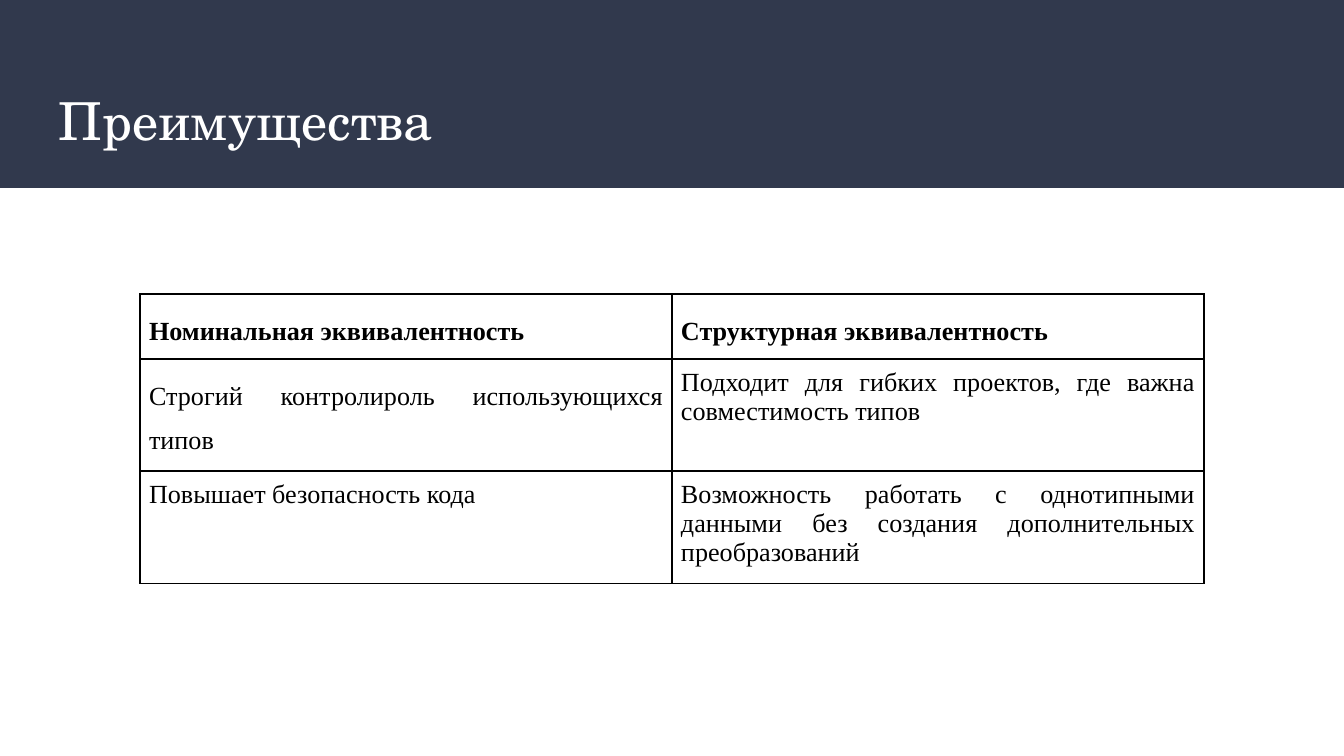
from pptx import Presentation
from pptx.dml.color import RGBColor
from pptx.enum.shapes import MSO_SHAPE as Shape
from pptx.enum.text import MSO_ANCHOR as Anchor, PP_ALIGN as Align
from pptx.oxml import parse_xml
from pptx.oxml.ns import nsdecls
from pptx.util import Pt

PX = 914400 / 134.4
NAVY = RGBColor(0x31, 0x39, 0x4D)
WHITE = RGBColor(0xFF, 0xFF, 0xFF)
BLACK = RGBColor(0x00, 0x00, 0x00)
TITLE_FONT = "TeX Gyre Schola"
TABLE_FONT = "Times New Roman"
ROW_HEIGHTS = (62, 105, 106)
CELL_MARGIN = 9
ROWS = (
    ("Номинальная эквивалентность", "Структурная эквивалентность"),
    ("Строгий контролироль использующихся типов",
     "Подходит для гибких проектов, где важна совместимость типов"),
    ("Повышает безопасность кода",
     "Возможность работать с однотипными данными без создания дополнительных преобразований"),
)
SPACED_CELLS = {(0, 0), (0, 1), (1, 0)}


def px(length):
    """Turn pixels into EMU."""
    return round(length * PX)


def style_font(font, name, size, color, bold=False):
    """Set the look of a font."""
    font.name = name
    font.size = Pt(size)
    font.color.rgb = color
    font.bold = bold


def add_header(page, left, top, width, height):
    """Draw the header band with its title."""
    band = page.shapes.add_shape(
        Shape.RECTANGLE, px(left), px(top), px(width), px(height))
    band.shadow.inherit = False
    band.fill.solid()
    band.fill.fore_color.rgb = NAVY
    band.line.fill.background()

    title = page.shapes.add_textbox(
        px(left + 46), px(top + 74), px(width - 92), px(91))
    frame = title.text_frame
    frame.word_wrap = True
    frame.vertical_anchor = Anchor.MIDDLE
    frame.margin_left = frame.margin_right = px(13)
    frame.margin_top = frame.margin_bottom = px(13)
    para = frame.paragraphs[0]
    para.text = "Преимущества"
    style_font(para.font, TITLE_FONT, 28, WHITE)


def add_borders(cell):
    """Give a cell a thin black line on every side."""
    properties = cell._tc.get_or_add_tcPr()
    for index, side in enumerate(("lnL", "lnR", "lnT", "lnB")):
        properties.insert(index, parse_xml(
            f'<a:{side} {nsdecls("a")} w="{Pt(1)}"><a:solidFill>'
            f'<a:srgbClr val="{BLACK}"/></a:solidFill></a:{side}>'))


def fill_cell(cell, text, bold, spaced):
    """Write justified text in a bordered cell."""
    cell.fill.background()
    cell.margin_left = cell.margin_right = px(CELL_MARGIN)
    cell.margin_top = cell.margin_bottom = px(CELL_MARGIN)
    para = cell.text_frame.paragraphs[0]
    para.text = text
    para.alignment = Align.JUSTIFY
    if spaced:
        para.line_spacing = 1.5
        para.space_before = para.space_after = Pt(12)
    style_font(para.font, TABLE_FONT, 14, BLACK, bold)
    add_borders(cell)


def add_comparison(page, left, top, width):
    """Draw the table that compares the two kinds of equivalence."""
    table = page.shapes.add_table(
        len(ROWS), len(ROWS[0]), px(left), px(top), px(width),
        px(sum(ROW_HEIGHTS))).table
    table.first_row = table.horz_banding = False
    for row, height in zip(table.rows, ROW_HEIGHTS):
        row.height = px(height)
    for row, texts in enumerate(ROWS):
        for column, text in enumerate(texts):
            fill_cell(table.cell(row, column), text, row == 0,
                      (row, column) in SPACED_CELLS)


def main():
    """Build and save the slide."""
    deck = Presentation()
    deck.slide_width, deck.slide_height = px(1344), px(756)
    page = deck.slides.add_slide(deck.slide_layouts[6])
    add_header(page, 0, 0, 1344, 188)
    add_comparison(page, 140, 294, 1064)
    deck.save("out.pptx")


if __name__ == "__main__":
    main()
